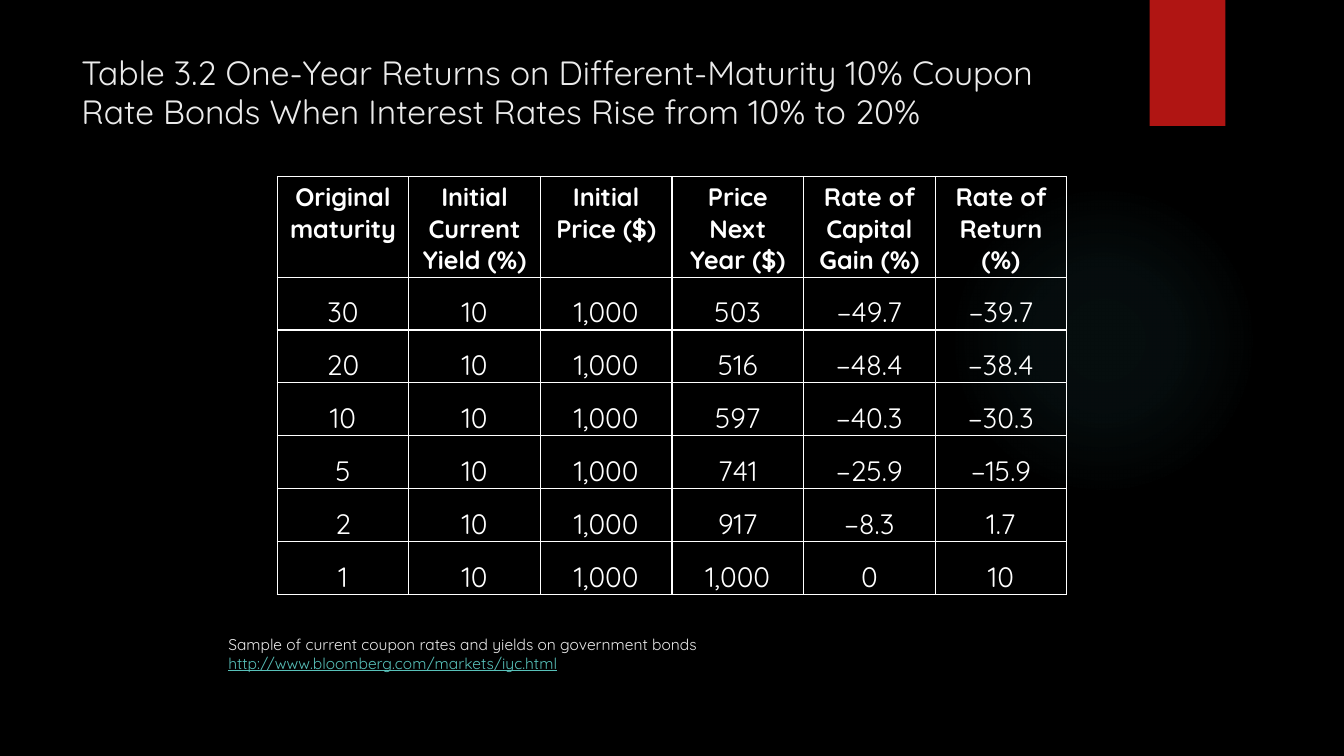
from pptx import Presentation
from pptx.dml.color import RGBColor
from pptx.enum.shapes import MSO_SHAPE as SHAPE
from pptx.enum.text import MSO_ANCHOR as ANCHOR, PP_ALIGN as ALIGN
from pptx.oxml import parse_xml
from pptx.util import Pt

PX = 9525  # EMU in one px, 96 px to the inch
NS = 'xmlns:a="http://schemas.openxmlformats.org/drawingml/2006/main"'
FONT = "Quicksand"
BLACK = RGBColor(0x00, 0x00, 0x00)
WHITE = RGBColor(0xFF, 0xFF, 0xFF)
PALE = RGBColor(0xEB, 0xEB, 0xEB)
RED = RGBColor(0xB0, 0x15, 0x13)
TEAL = RGBColor(0x50, 0xB9, 0xC1)
LINK = RGBColor(0x58, 0xC1, 0xBA)


def write(par, text, size, color, bold=False, line=False, align=ALIGN.LEFT, space=1.0):
    par.alignment = align
    par.line_spacing = space
    run = par.add_run()
    run.text = text
    font = run.font
    font.name, font.size, font.bold = FONT, Pt(size), bold
    font.underline = line
    font.color.rgb = color


def box(left, top, width, height):
    frame = slide.shapes.add_textbox(left * PX, top * PX, width * PX, height * PX).text_frame
    frame.word_wrap = True
    return frame


deck = Presentation()
deck.slide_width, deck.slide_height = 1280 * PX, 720 * PX
slide = deck.slides.add_slide(deck.slide_layouts[6])
back = slide.background.fill
back.solid()
back.fore_color.rgb = BLACK

# Soft glow
glow = slide.shapes.add_shape(SHAPE.OVAL, 903 * PX, 176 * PX, 296 * PX, 296 * PX)
glow.shadow.inherit = False
glow.line.fill.background()
stops = "".join(
    f'<a:gs pos="{pos * 1000}"><a:srgbClr val="{TEAL}"><a:alpha val="{alpha * 1000}"/></a:srgbClr></a:gs>'
    for pos, alpha in [(0, 7), (36, 6), (69, 0)])
glow.element.spPr.insert(2, parse_xml(
    f'<a:gradFill {NS} rotWithShape="1"><a:gsLst>{stops}</a:gsLst><a:path path="circle">'
    '<a:fillToRect l="50000" t="50000" r="50000" b="50000"/></a:path></a:gradFill>'))

# Red tab with its shadow
tab = slide.shapes.add_shape(SHAPE.RECTANGLE, 1095 * PX, 0, 72 * PX, 120 * PX)
tab.shadow.inherit = False
tab.fill.solid()
tab.fill.fore_color.rgb = RED
tab.line.fill.background()
tab.element.spPr[-1].append(parse_xml(
    f'<a:outerShdw {NS} blurRad="{Pt(3)}" dist="{Pt(2)}" dir="5400000" rotWithShape="0">'
    f'<a:srgbClr val="{BLACK}"><a:alpha val="45000"/></a:srgbClr></a:outerShdw>'))

# Title
write(box(68, 48, 987, 147).paragraphs[0],
      "Table 3.2 One-Year Returns on Different-Maturity 10% Coupon "
      "Rate Bonds When Interest Rates Rise from 10% to 20%", 24, PALE, space=0.95)

# Table of returns
heads = ["Original maturity", "Initial Current Yield (%)", "Initial Price ($)",
         "Price Next Year ($)", "Rate of Capital Gain (%)", "Rate of Return (%)"]
bonds = [
    ("30", "503", "−49.7", "−39.7"),
    ("20", "516", "−48.4", "−38.4"),
    ("10", "597", "−40.3", "−30.3"),
    ("5", "741", "−25.9", "−15.9"),
    ("2", "917", "−8.3", "1.7"),
    ("1", "1,000", "0", "10"),
]
rows = [heads] + [[age, "10", "1,000", *rest] for age, *rest in bonds]
grid = slide.shapes.add_table(len(rows), len(heads), 264 * PX, 168 * PX, 752 * PX, 398 * PX).table
grid.first_row = grid.horz_banding = False
for col in grid.columns:
    col.width = 752 * PX // len(heads)
for r, row in enumerate(rows):
    grid.rows[r].height = 302 * PX // len(bonds) if r else 96 * PX
    for c, text in enumerate(row):
        cell = grid.cell(r, c)
        cell.fill.background()
        if r:
            cell.vertical_anchor = ANCHOR.BOTTOM
            cell.margin_left = cell.margin_right = cell.margin_top = PX
            cell.margin_bottom = 0
        write(cell.text_frame.paragraphs[0], text, 20 if r else 18, WHITE,
              bold=r == 0, align=ALIGN.CENTER)
        props = cell._tc.get_or_add_tcPr()
        for i, side in enumerate("LRTB"):
            props.insert(i, parse_xml(
                f'<a:ln{side} {NS} w="{Pt(1)}"><a:solidFill><a:srgbClr val="{WHITE}"/>'
                f'</a:solidFill></a:ln{side}>'))

# Source note
note = box(208, 600, 864, 43)
write(note.paragraphs[0], "Sample of current coupon rates and yields on government bonds", 11.1, PALE)
write(note.add_paragraph(), "http://www.bloomberg.com/markets/iyc.html", 11.1, LINK, line=True)

deck.save("out.pptx")
